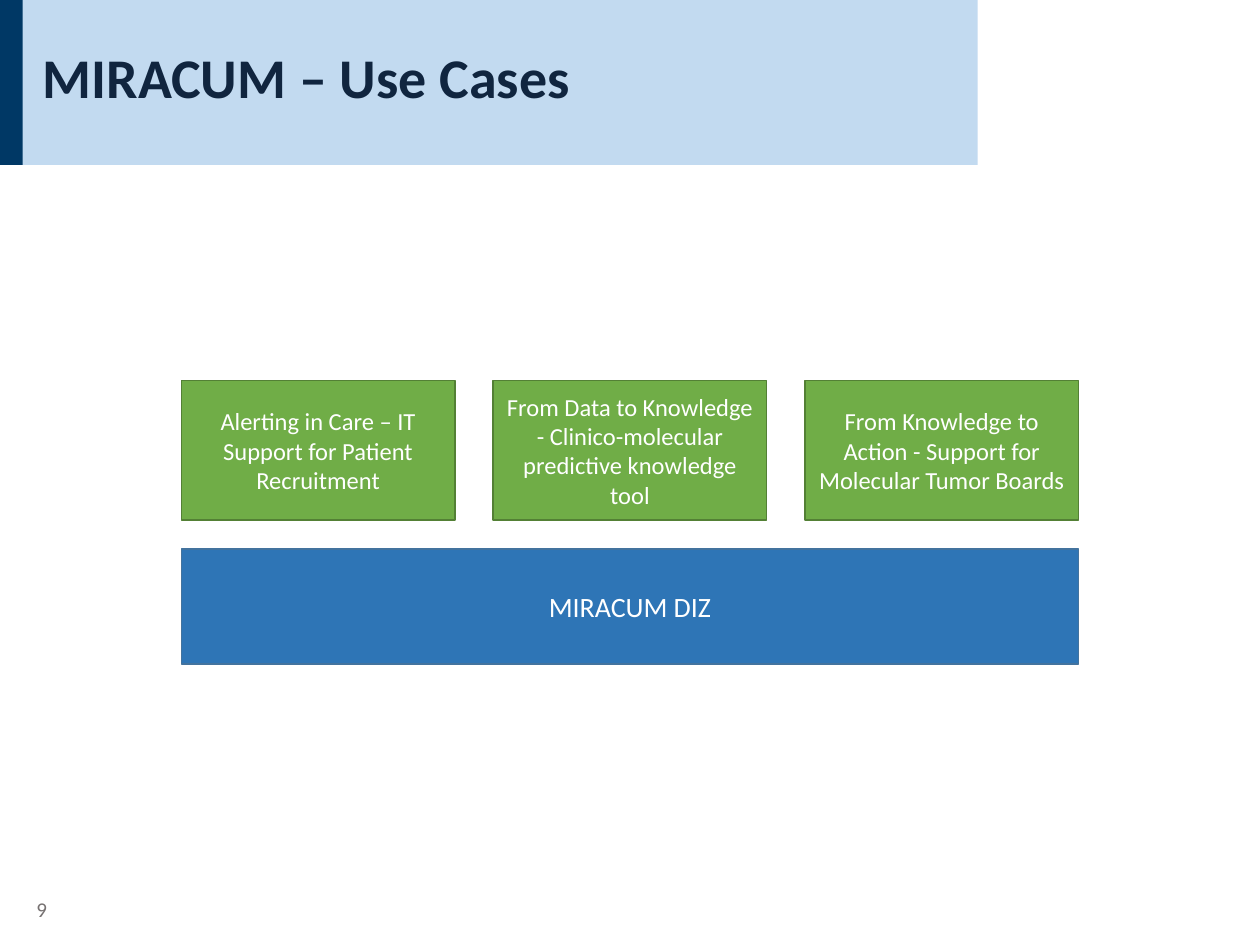
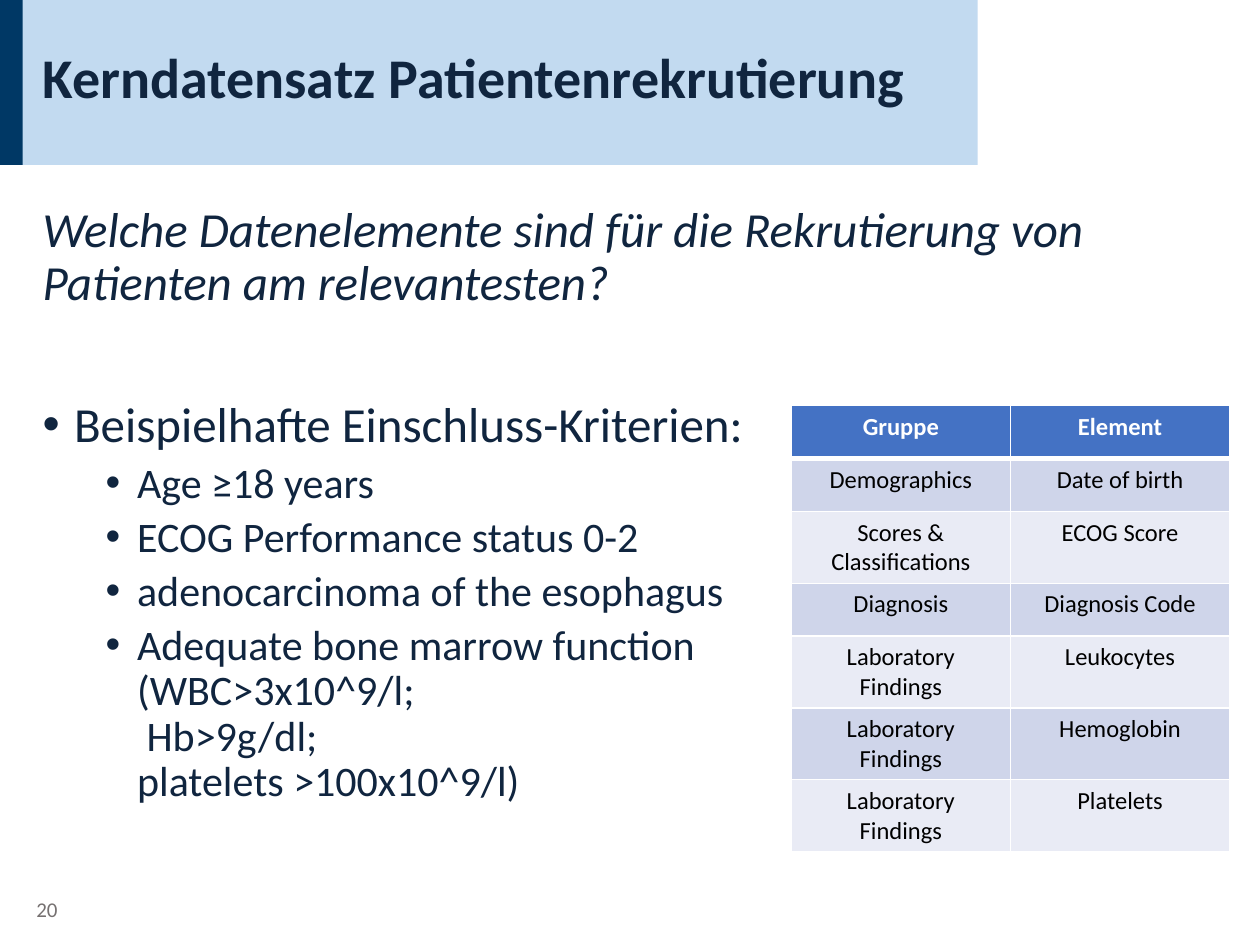
from lxml import etree
from pptx import Presentation
from pptx import util as u
from pptx.dml.color import RGBColor
from pptx.enum import shapes, text
from pptx.oxml import ns

COLOURS = {
    "band": "C2DAF0", "navy": "003865", "ink": "10253F", "number": "767171",
    "white": "FFFFFF", "black": "000000",
    "base": "2E75B6", "base_line": "43739E", "case": "70AD47", "case_line": "538035",
    "header": "4472C4", "row_dark": "CFD5EA", "row_light": "E9EBF5",
}
FONT = "Calibri"

# Text formats
TITLE = {"size": u.Pt(32), "bold": True, "colour": "ink"}
NUMBER = {"size": u.Pt(12), "colour": "number"}
QUESTION = {"size": u.Pt(28), "italic": True, "colour": "ink"}
TOPIC = {"size": u.Pt(28), "colour": "ink"}
CRITERION = {"size": u.Pt(24), "colour": "ink"}
BASE = {"size": u.Pt(16), "colour": "white"}
CASE = {"size": u.Pt(14), "colour": "white"}
HEADER_CELL = {"size": u.Pt(14), "bold": True, "colour": "white"}
BODY_CELL = {"size": u.Pt(14), "bold": False, "colour": "black"}

# Paragraph formats
CENTRED = {"alignment": text.PP_ALIGN.CENTER}
TIGHT = {"line_spacing": 0.9}

USE_CASES = [
    "Alerting in Care – IT Support for Patient Recruitment",
    "From Data to Knowledge - Clinico-molecular predictive knowledge tool",
    "From Knowledge to Action - Support for Molecular Tumor Boards",
]
CRITERIA = [
    "Age ≥18 years",
    "ECOG Performance status 0-2",
    "adenocarcinoma of the esophagus",
    "Adequate bone marrow function\v(WBC>3x10^9/l;\v Hb>9g/dl;\vplatelets >100x10^9/l)",
]
DATA_ELEMENTS = [
    ("Gruppe", "Element"),
    ("Demographics", "Date of birth"),
    ("Scores & Classifications", "ECOG Score"),
    ("Diagnosis", "Diagnosis Code"),
    ("Laboratory Findings", "Leukocytes"),
    ("Laboratory Findings", "Hemoglobin"),
    ("Laboratory Findings", "Platelets"),
]
ROW_HEIGHTS = [0.42, 0.42, 0.57, 0.42, 0.57, 0.57, 0.57]


def colour(name):
    return RGBColor.from_string(COLOURS[name])


def inches(values):
    return [u.Inches(value) for value in values]


def write(paragraph, words, font_format, paragraph_format):
    """Fill a paragraph and format it and its runs."""
    paragraph.text = words
    for name, value in paragraph_format.items():
        setattr(paragraph, name, value)
    for run in paragraph.runs:
        run.font.name = FONT
        for name, value in font_format.items():
            if name == "colour":
                run.font.color.rgb = colour(value)
            else:
                setattr(run.font, name, value)


def add_bullet(paragraph, left):
    properties = paragraph._p.get_or_add_pPr()
    properties.set("marL", str(u.Inches(left)))
    properties.set("indent", str(u.Inches(-0.25)))
    etree.SubElement(properties, ns.qn("a:buFont"), typeface="Arial")
    etree.SubElement(properties, ns.qn("a:buChar"), char="•")


def add_box(slide, place, fill, line=None):
    shape = slide.shapes.add_shape(shapes.MSO_SHAPE.RECTANGLE, *inches(place))
    shape.shadow.inherit = False
    shape.fill.solid()
    shape.fill.fore_color.rgb = colour(fill)
    if line:
        shape.line.color.rgb = colour(line)
        shape.line.width = u.Pt(1)
    else:
        shape.line.fill.background()
    return shape


def add_label_box(slide, place, fill, line, words, font_format):
    frame = add_box(slide, place, fill, line).text_frame
    frame.word_wrap = True
    frame.vertical_anchor = text.MSO_ANCHOR.MIDDLE
    write(frame.paragraphs[0], words, font_format, CENTRED)


def add_text_frame(slide, place, anchor=text.MSO_ANCHOR.TOP):
    frame = slide.shapes.add_textbox(*inches(place)).text_frame
    frame.word_wrap = True
    frame.vertical_anchor = anchor
    return frame


def add_slide(presentation, title, number):
    """Blank slide with title band, title and slide number."""
    slide = presentation.slides.add_slide(presentation.slide_layouts[6])
    add_box(slide, (0.14, 0, 7.62, 1.31), "band")
    add_box(slide, (0, 0, 0.18, 1.31), "navy")
    number_frame = add_text_frame(slide, (0.19, 7.07, 0.58, 0.3))
    write(number_frame.paragraphs[0], str(number), NUMBER, {})
    title_frame = add_text_frame(slide, (0.24, 0, 7.45, 1.27), text.MSO_ANCHOR.MIDDLE)
    write(title_frame.paragraphs[0], title, TITLE, TIGHT)
    return slide


def set_borders(cell, widths):
    """Draw white cell borders; they stand before the fill."""
    properties = cell._tc.get_or_add_tcPr()
    for index, (side, width) in enumerate(widths.items()):
        border = etree.Element(ns.qn(f"a:ln{side}"), w=str(u.Pt(width)))
        fill = etree.SubElement(border, ns.qn("a:solidFill"))
        etree.SubElement(fill, ns.qn("a:srgbClr"), val=COLOURS["white"])
        properties.insert(index, border)


def add_data_table(slide, place, rows, heights):
    graphic = slide.shapes.add_table(len(rows), len(rows[0]), *inches(place))
    table = graphic.table
    for row_index, (words_in_row, height) in enumerate(zip(rows, heights)):
        table.rows[row_index].height = u.Inches(height)
        is_header = row_index == 0
        fill = "header" if is_header else ("row_light", "row_dark")[row_index % 2]
        borders = {"L": 1, "R": 1, "T": 3 if row_index == 1 else 1, "B": 3 if is_header else 1}
        for column_index, words in enumerate(words_in_row):
            cell = table.cell(row_index, column_index)
            cell.fill.solid()
            cell.fill.fore_color.rgb = colour(fill)
            set_borders(cell, borders)
            write(cell.text_frame.paragraphs[0], words,
                  HEADER_CELL if is_header else BODY_CELL, CENTRED)


def build_use_cases(presentation):
    slide = add_slide(presentation, "MIRACUM – Use Cases", 9)
    left, width, case_width = 1.44, 7.12, 2.17
    # Shared base
    add_label_box(slide, (left, 4.36, width, 0.91), "base", "base_line", "MIRACUM DIZ", BASE)
    # Use cases spread evenly over the base
    step = (width - case_width) / (len(USE_CASES) - 1)
    for index, words in enumerate(USE_CASES):
        place = (left + index * step, 3.02, case_width, 1.11)
        add_label_box(slide, place, "case", "case_line", words, CASE)


def build_core_data_set(presentation):
    slide = add_slide(presentation, "Kerndatensatz Patientenrekrutierung", 20)
    # Question and inclusion criteria
    frame = add_text_frame(slide, (0.24, 1.58, 9.2, 5.17))
    write(frame.paragraphs[0],
          "Welche Datenelemente sind für die Rekrutierung von Patienten am relevantesten?",
          QUESTION, TIGHT)
    bullets = [("Beispielhafte Einschluss-Kriterien:", 0.25, TOPIC, 51)]
    bullets += [(words, 0.75, CRITERION, 5) for words in CRITERIA]
    for words, left, font_format, space in bullets:
        paragraph = frame.add_paragraph()
        add_bullet(paragraph, left)
        write(paragraph, words, font_format, {**TIGHT, "space_before": u.Pt(space)})
    # Data elements
    add_data_table(slide, (6.28, 3.22, 3.48, 3.54), DATA_ELEMENTS, ROW_HEIGHTS)


def main():
    presentation = Presentation()
    presentation.slide_width = u.Inches(10)
    presentation.slide_height = u.Inches(7.5)
    build_use_cases(presentation)
    build_core_data_set(presentation)
    presentation.save("out.pptx")


if __name__ == "__main__":
    main()
